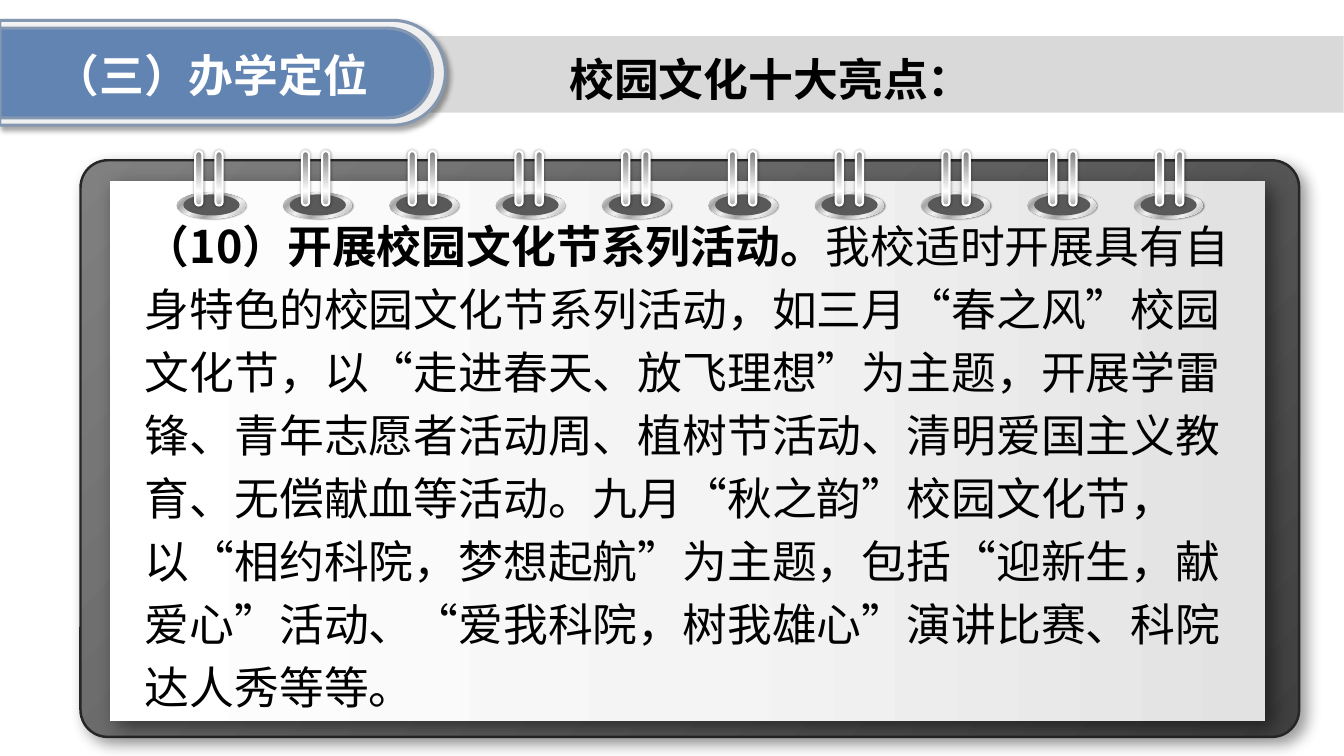
from lxml import etree
from pptx import Presentation
from pptx.dml.color import RGBColor
from pptx.enum.lang import MSO_LANGUAGE_ID as LANGUAGE
from pptx.enum.shapes import MSO_SHAPE as SHAPE
from pptx.enum.text import MSO_AUTO_SIZE as AUTO_SIZE, PP_ALIGN as ALIGN
from pptx.oxml.ns import qn
from pptx.util import Cm, Pt

FONT = "Noto Sans CJK SC"
NOTEBOOK_FILL = [(0, "808080"), (100, "404040")]
PAPER_FILL = [(0, "FFFFFF"), (52, "F4F4F4"), (100, "E2E2E2")]
RIM_FILL = [(0, "FFFFFF"), (17, "A6A6A6"), (35, "F2F2F2"),
            (55, "A6A6A6"), (75, "F2F2F2"), (100, "A6A6A6")]
RING_FILL = [(0, "808080"), (23, "A6A6A6"), (52, "D9D9D9"),
             (74, "FFFFFF"), (100, "A6A6A6")]


def add_part(shapes, kind, place, fill, angle=0, opacity=100, line=None, shadow=None, round_off=None):
    part = shapes.add_shape(kind, *[Cm(length) for length in place])
    part.shadow.inherit = False
    if round_off is not None:
        part.adjustments[0] = round_off
    if isinstance(fill, str):
        part.fill.solid()
        part.fill.fore_color.rgb = RGBColor.from_string(fill)
        if opacity < 100:
            color = part.fill._xPr.find(qn("a:solidFill"))[0]
            etree.SubElement(color, qn("a:alpha"), val=str(opacity * 1000))
    else:
        part.fill.gradient()
        gradient = part.fill._xPr.find(qn("a:gradFill"))
        stops = gradient.find(qn("a:gsLst"))
        for stop in list(stops):
            stops.remove(stop)
        for position, color in fill:
            stop = etree.SubElement(stops, qn("a:gs"), pos=str(position * 1000))
            etree.SubElement(stop, qn("a:srgbClr"), val=color)
        gradient.find(qn("a:lin")).set("ang", str(angle * 60000))
    if line:
        part.line.color.rgb = RGBColor.from_string(line[0])
        part.line.width = Pt(line[1])
    else:
        part.line.fill.background()
    if shadow:
        strength, blur, distance, direction = shadow
        effects = part._element.spPr.find(qn("a:effectLst"))
        outer = etree.SubElement(effects, qn("a:outerShdw"), blurRad=str(Pt(blur)), dist=str(Pt(distance)),
                                 dir=str(direction * 60000), algn="tl", rotWithShape="0")
        color = etree.SubElement(outer, qn("a:srgbClr"), val="000000")
        etree.SubElement(color, qn("a:alpha"), val=str(strength * 1000))
    return part


def add_text(shapes, place, texts, color, align=ALIGN.LEFT):
    box = shapes.add_textbox(*[Cm(length) for length in place])
    box.text_frame.word_wrap = True
    box.text_frame.auto_size = AUTO_SIZE.SHAPE_TO_FIT_TEXT
    para = box.text_frame.paragraphs[0]
    para.alignment = align
    for text, bold in texts:
        span = para.add_run()
        span.text = text
        span.font.size = Pt(32)
        span.font.bold = bold
        span.font.name = FONT
        span.font.language_id = LANGUAGE.SIMPLIFIED_CHINESE
        span.font.color.rgb = RGBColor.from_string(color)
        etree.SubElement(span.font._element, qn("a:ea"), typeface=FONT)
    return para


deck = Presentation()
deck.slide_width = Cm(33.87)
deck.slide_height = Cm(19.05)
page = deck.slides.add_slide(deck.slide_layouts[6])

add_part(page.shapes, SHAPE.RECTANGLE, (7.92, 0.91, 25.94, 1.93), "D9D9D9")

tab = page.shapes.add_group_shape().shapes
for place, fill, shadow in [
    ((4.29, -3.78, 2.64, 11.23), "FFFFFF", (40, 4, 3, 45)),
    ((4.32, -3.61, 2.26, 10.9), "466FA6", None),
]:
    part = add_part(tab, SHAPE.ROUND_2_SAME_RECTANGLE, place, fill, opacity=83,
                    line=("8497B0", 2.25), shadow=shadow, round_off=0.5)
    part.rotation = 90

add_text(page.shapes, (0.58, 1.07, 9.5, 1.63), [("（三）办学定位", True)], "FFFFFF", ALIGN.CENTER)
add_text(page.shapes, (14.1, 1.17, 13.61, 1.63), [("校园文化十大亮点：", True)], "000000")

notebook = page.shapes.add_group_shape().shapes
add_part(notebook, SHAPE.ROUNDED_RECTANGLE, (2.03, 4.04, 30.71, 14.53), NOTEBOOK_FILL, angle=45,
         line=("262626", 1.75), shadow=(40, 11, 6, 45), round_off=0.047)
add_part(notebook, SHAPE.ROUNDED_RECTANGLE, (2.77, 4.57, 29.11, 13.59), PAPER_FILL,
         shadow=(50, 14, 7, 45), round_off=0)

for index in range(10):
    left = 4.46 + index * 2.68
    add_part(notebook, SHAPE.OVAL, (left, 4.85, 1.73, 0.66), RIM_FILL, angle=45, shadow=(40, 1, 1, 45))
    add_part(notebook, SHAPE.OVAL, (left + 0.16, 4.9, 1.42, 0.53), "595959")

for index in range(10):
    for offset in (0, 0.51):
        left = 4.92 + index * 2.69 + offset
        add_part(notebook, SHAPE.ROUNDED_RECTANGLE, (left, 3.81, 0.18, 1.37), RING_FILL, angle=90,
                 line=("FFFFFF", 1.5), shadow=(40, 2, 0, 0), round_off=0.5)

body = add_text(page.shapes, (3.4, 5.16, 28.27, 13.08), [
    ("（10）开展校园文化节系列活动。", True),
    ("我校适时开展具有自身特色的校园文化节系列活动，如三月“春之风”校园文化节，"
     "以“走进春天、放飞理想”为主题，开展学雷锋、青年志愿者活动周、植树节活动、"
     "清明爱国主义教育、无偿献血等活动。九月“秋之韵”校园文化节，"
     "以“相约科院，梦想起航”为主题，包括“迎新生，献爱心”活动、"
     "“爱我科院，树我雄心”演讲比赛、科院达人秀等等。", False),
], "000000")
body.line_spacing = Pt(45)

deck.save("out.pptx")
